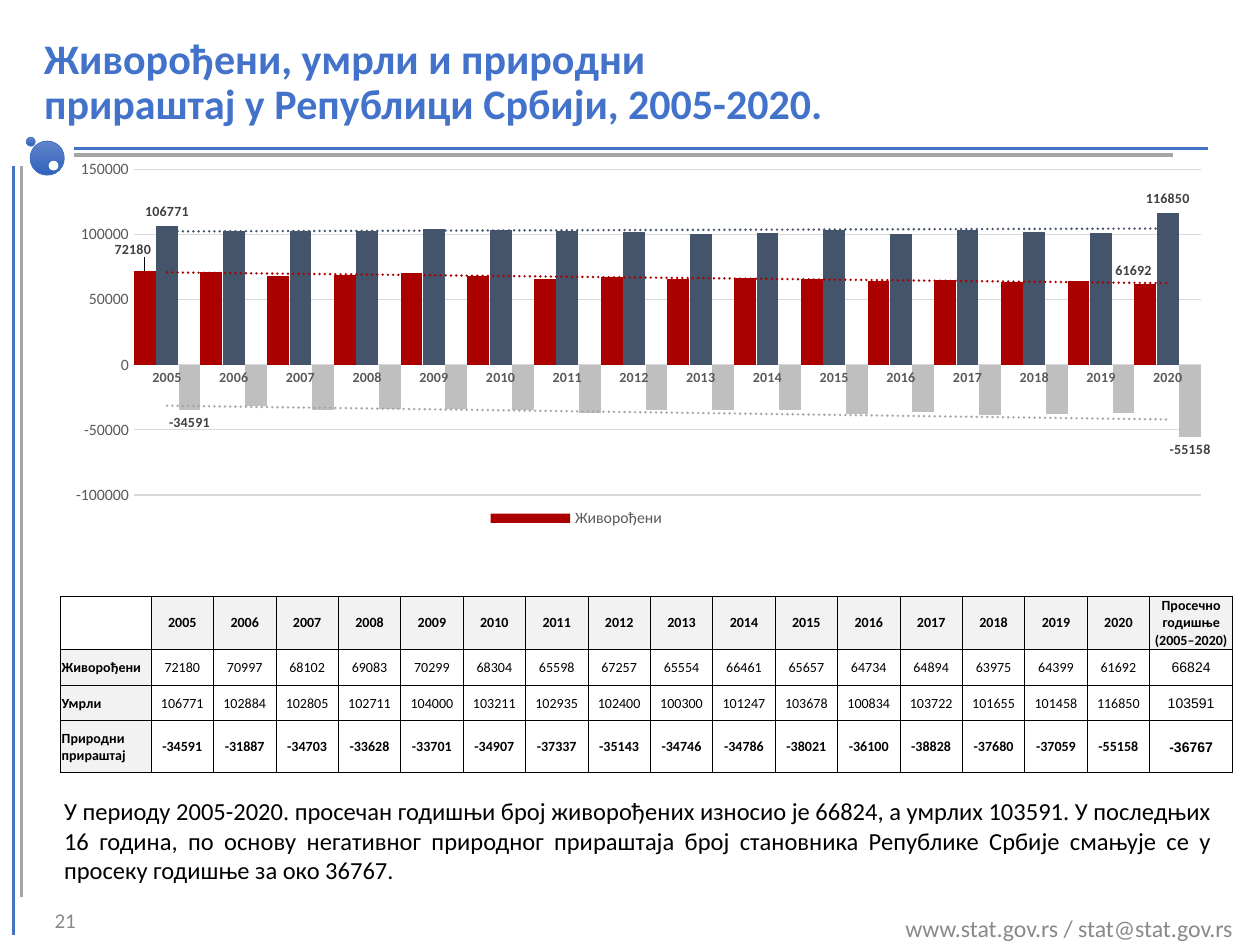
from dataclasses import dataclass

from lxml import etree
from pptx import Presentation
from pptx.chart.data import CategoryChartData
from pptx.dml.color import RGBColor
from pptx.enum import chart as ch, shapes, text
from pptx.oxml import parse_xml
from pptx.oxml.ns import qn
from pptx.util import Emu, Inches, Pt

COLORS = {"blue": "4472C4", "title": "4272CA", "gray": "A5A5A5", "muted": "898989",
          "black": "000000", "white": "FFFFFF", "header": "F2F2F2", "axis": "595959",
          "grid": "D9D9D9", "label": "404040", "light": "6183CB", "deep": "3062BB",
          "births": "AA0000", "deaths": "44546A", "growth": "BFBFBF"}
NS = ('xmlns:c="http://schemas.openxmlformats.org/drawingml/2006/chart" '
      'xmlns:a="http://schemas.openxmlformats.org/drawingml/2006/main"')
ALIGN = text.PP_ALIGN
YEARS = [str(year) for year in range(2005, 2021)]


@dataclass
class Rule:
    start: tuple
    end: tuple
    color: str


@dataclass
class Bubble:
    left: float
    top: float
    size: float
    white: bool = False


@dataclass
class Indicator:
    name: str
    values: list
    mean: int
    color: str
    trend: str
    shifts: dict  # moved end labels: point index -> (x, y) share of the chart
    bold: bool = False


RULES = [Rule((0.11, 1.32), (0.11, 7.42), "blue"), Rule((0.17, 1.32), (0.17, 7.12), "gray"),
         Rule((0.59, 1.18), (9.59, 1.18), "blue"), Rule((0.59, 1.23), (9.31, 1.23), "gray")]
BUBBLES = [Bubble(0.24, 1.12, 0.27), Bubble(0.21, 1.09, 0.07), Bubble(0.39, 1.28, 0.07, True)]
INDICATORS = [
    Indicator("Живорођени", [72180, 70997, 68102, 69083, 70299, 68304, 65598, 67257, 65554, 66461,
                             65657, 64734, 64894, 63975, 64399, 61692],
              66824, "births", "births", {0: (-0.01, -0.02), 15: (-0.01, 0)}),
    Indicator("Умрли", [106771, 102884, 102805, 102711, 104000, 103211, 102935, 102400, 100300,
                        101247, 103678, 100834, 103722, 101655, 101458, 116850],
              103591, "deaths", "deaths", {}),
    Indicator("Природни прираштај", [-34591, -31887, -34703, -33628, -33701, -34907, -37337, -35143,
                                     -34746, -34786, -38021, -36100, -38828, -37680, -37059, -55158],
              -36767, "growth", "gray", {}, True),
]


def rgb(name: str) -> RGBColor:
    return RGBColor.from_string(COLORS[name])


def set_font(font, size: float, color: str, bold: bool = False, name: str = "Calibri") -> None:
    for key, value in {"size": Pt(size), "bold": bold, "name": name}.items():
        setattr(font, key, value)
    font.color.rgb = rgb(color)


def write(frame, words: str, size: float, color: str, align=ALIGN.LEFT, **style) -> None:
    frame.text = words
    frame.word_wrap = True
    paragraph = frame.paragraphs[0]
    paragraph.alignment = align
    for run in paragraph.runs:
        set_font(run.font, size, color, **style)


def add_text(slide, box: tuple, words: str, size: float, color: str, align,
             anchor=text.MSO_ANCHOR.TOP) -> None:
    frame = slide.shapes.add_textbox(*map(Inches, box)).text_frame
    write(frame, words, size, color, align)
    frame.vertical_anchor = anchor


def draw_rule(slide, rule: Rule) -> None:
    line = slide.shapes.add_connector(shapes.MSO_CONNECTOR.STRAIGHT,
                                      *map(Inches, rule.start + rule.end))
    line.line.color.rgb = rgb(rule.color)
    line.line.width = Pt(1.75)
    etree.SubElement(line._element.spPr, qn("a:effectLst"))


def draw_bubble(slide, bubble: Bubble) -> None:
    oval = slide.shapes.add_shape(shapes.MSO_SHAPE.OVAL, *map(
        Inches, (bubble.left, bubble.top, bubble.size, bubble.size)))
    oval.shadow.inherit = False
    if bubble.white:
        oval.fill.solid()
        oval.fill.fore_color.rgb = rgb("white")
    else:
        oval.fill.gradient()
        oval.fill.gradient_angle = 270
        for stop, color in zip(oval.fill.gradient_stops, ("light", "deep")):
            stop.color.rgb = rgb(color)
    oval.line.color.rgb = rgb("white" if bubble.white else "blue")
    oval.line.width = Pt(0.5)


def layout_xml(inner: bool = False, **parts: float):
    target = '<c:layoutTarget val="inner"/>' if inner else ""
    modes = '<c:xMode val="edge"/><c:yMode val="edge"/>' if "w" in parts else ""
    sizes = "".join(f'<c:{key} val="{value}"/>' for key, value in parts.items())
    return parse_xml(f"<c:layout {NS}><c:manualLayout>{target}{modes}{sizes}"
                     "</c:manualLayout></c:layout>")


def format_series(series, indicator: Indicator) -> None:
    series.format.fill.solid()
    series.format.fill.fore_color.rgb = rgb(indicator.color)
    series.invert_if_negative = False
    series.data_labels.show_value = False
    for index in (0, len(YEARS) - 1):
        label = series.points[index].data_label
        set_font(label.font, 8, "label", True)
        label.position = ch.XL_LABEL_POSITION.OUTSIDE_END
        if index in indicator.shifts:
            x, y = indicator.shifts[index]
            series._element.dLbls.findall(qn("c:dLbl"))[-1].find(qn("c:idx")).addnext(
                layout_xml(x=x, y=y))
    series._element.dLbls.addnext(parse_xml(
        f'<c:trendline {NS}><c:spPr><a:ln w="19050" cap="rnd"><a:solidFill>'
        f'<a:srgbClr val="{COLORS[indicator.trend]}"/></a:solidFill><a:prstDash val="sysDot"/>'
        '</a:ln></c:spPr><c:trendlineType val="linear"/><c:dispRSqr val="0"/>'
        '<c:dispEq val="0"/></c:trendline>'))


def draw_chart(slide) -> None:
    data = CategoryChartData()
    data.categories = YEARS
    for indicator in INDICATORS:
        data.add_series(indicator.name, indicator.values)
    chart = slide.shapes.add_chart(ch.XL_CHART_TYPE.COLUMN_CLUSTERED,
                                   *map(Inches, (0.41, 1.22, 9.31, 3.15)), data).chart
    set_font(chart.font, 10, "black")
    chart.has_title = False
    plot = chart.plots[0]
    for key, value in {"gap_width": 0, "overlap": -3, "vary_by_categories": False}.items():
        setattr(plot, key, value)
    for series, indicator in zip(plot.series, INDICATORS):
        format_series(series, indicator)

    # Axes
    years, counts = chart.category_axis, chart.value_axis
    for axis, size, bold in ((years, 8, True), (counts, 9, False)):
        axis.major_tick_mark = axis.minor_tick_mark = ch.XL_TICK_MARK.NONE
        set_font(axis.tick_labels.font, size, "axis", bold)
    counts.minimum_scale, counts.maximum_scale, counts.major_unit = -100000, 150000, 50000
    counts.format.line.fill.background()
    for line in (years.format.line, counts.major_gridlines.format.line):
        line.color.rgb = rgb("grid")
        line.width = Pt(0.75)
    area = chart._chartSpace.chart.plotArea
    for old in area.findall(qn("c:layout")):
        area.remove(old)
    area.insert(0, layout_xml(True, x=0.07, y=0.04, w=0.91, h=0.82))

    # Legend without the trend lines
    chart.has_legend = True
    legend = chart.legend
    legend.position = ch.XL_LEGEND_POSITION.BOTTOM
    legend.include_in_layout = False
    set_font(legend.font, 9, "axis")
    place = legend._element.find(qn("c:legendPos"))
    place.addnext(layout_xml(x=0.37, y=0.9, w=0.18, h=0.08))
    for entry in (5, 4, 3):
        place.addnext(parse_xml(f'<c:legendEntry {NS}><c:idx val="{entry}"/>'
                                '<c:delete val="1"/></c:legendEntry>'))


def fill_cell(cell, words: str, shaded: bool, align=ALIGN.CENTER, **style) -> None:
    for side in ("left", "right", "top"):
        setattr(cell, f"margin_{side}", Inches(0.01))
    cell.margin_bottom = 0
    cell.vertical_anchor = text.MSO_ANCHOR.MIDDLE
    write(cell.text_frame, words, 8, "black", align, **style)
    properties = cell._tc.get_or_add_tcPr()
    for edge in ("lnL", "lnR", "lnT", "lnB"):
        properties.append(parse_xml(f'<a:{edge} {NS} w="6350"><a:solidFill><a:srgbClr '
                                    f'val="{COLORS["black"]}"/></a:solidFill></a:{edge}>'))
    if shaded:
        cell.fill.solid()
        cell.fill.fore_color.rgb = rgb("header")
    else:
        cell.fill.background()


def draw_table(slide) -> None:
    heads = ["", *YEARS, "Просечно годишње (2005–2020)"]
    heights = (0.41, 0.29, 0.28, 0.41)
    table = slide.shapes.add_table(len(heights), len(heads),
                                   *map(Inches, (0.48, 4.73, 9.31, 1.39))).table
    name_width, mean_width = 0.72, 0.66
    year_width = (9.31 - name_width - mean_width) / len(YEARS)
    widths = [name_width, *[year_width] * len(YEARS), mean_width]
    for column, width in zip(table.columns, widths):
        column.width = Emu(Inches(width))
    for row, height in zip(table.rows, heights):
        row.height = Inches(height)
    for col, head in enumerate(heads):
        fill_cell(table.cell(0, col), head, col > 0, bold=True)
    for row, item in enumerate(INDICATORS, 1):
        fill_cell(table.cell(row, 0), item.name, True, ALIGN.LEFT, bold=True)
        for col, value in enumerate([*item.values, item.mean], 1):
            fill_cell(table.cell(row, col), str(value), False, bold=item.bold,
                      name="Arial" if col > len(YEARS) else "Calibri")


def main() -> None:
    deck = Presentation()
    deck.slide_width, deck.slide_height = Inches(10), Inches(7.5)
    slide = deck.slides.add_slide(deck.slide_layouts[5])

    # Frame lines and bubbles
    for rule in RULES:
        draw_rule(slide, rule)
    for bubble in BUBBLES:
        draw_bubble(slide, bubble)

    # Title
    title = slide.shapes.title
    for key, value in {"left": 0.25, "top": 0.16, "width": 9.56, "height": 1}.items():
        setattr(title, key, Inches(value))
    write(title.text_frame, "Живорођени, умрли и природни\vприраштај у Републици Србији, 2005-2020.",
          24, "title", bold=True)
    title.text_frame.auto_size = text.MSO_AUTO_SIZE.NONE
    title.text_frame.vertical_anchor = text.MSO_ANCHOR.MIDDLE
    title.text_frame.paragraphs[0].line_spacing = 0.9

    # Content
    draw_chart(slide)
    draw_table(slide)
    add_text(slide, (0.41, 6.27, 9.31, 0.81),
             "У периоду 2005-2020. просечан годишњи број живорођених износио је 66824, а умрлих "
             "103591. У последњих 16 година, по основу негативног природног прираштаја број "
             "становника Републике Србије смањује се у просеку годишње за око 36767.",
             14, "black", ALIGN.JUSTIFY)

    # Footer
    add_text(slide, (0.26, 7.1, 0.44, 0.4), "21", 12, "muted", ALIGN.RIGHT, text.MSO_ANCHOR.MIDDLE)
    add_text(slide, (6.5, 7.2, 3.38, 0.3), "www.stat.gov.rs / stat@stat.gov.rs", 13.6, "muted",
             ALIGN.RIGHT)
    deck.save("out.pptx")


if __name__ == "__main__":
    main()
